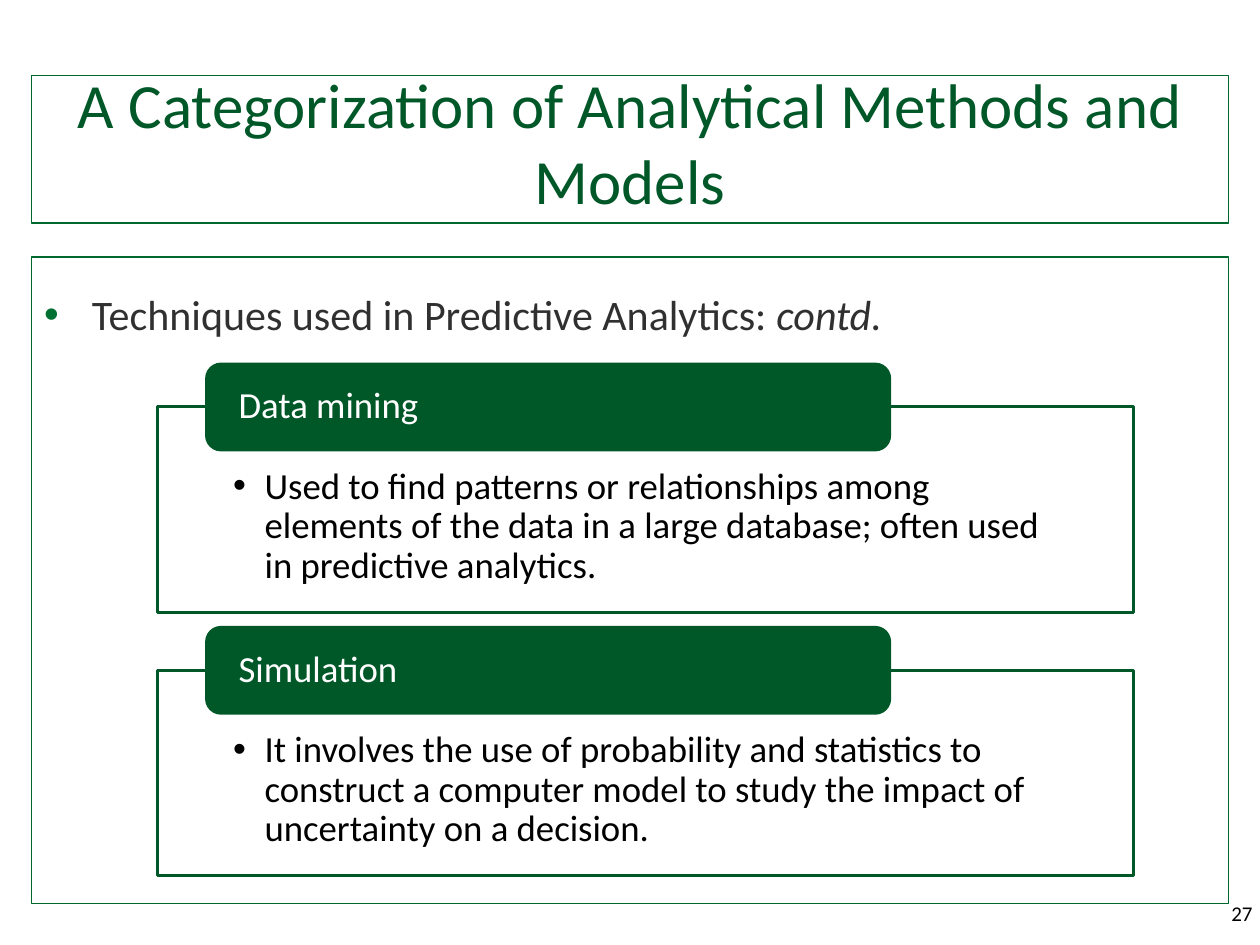
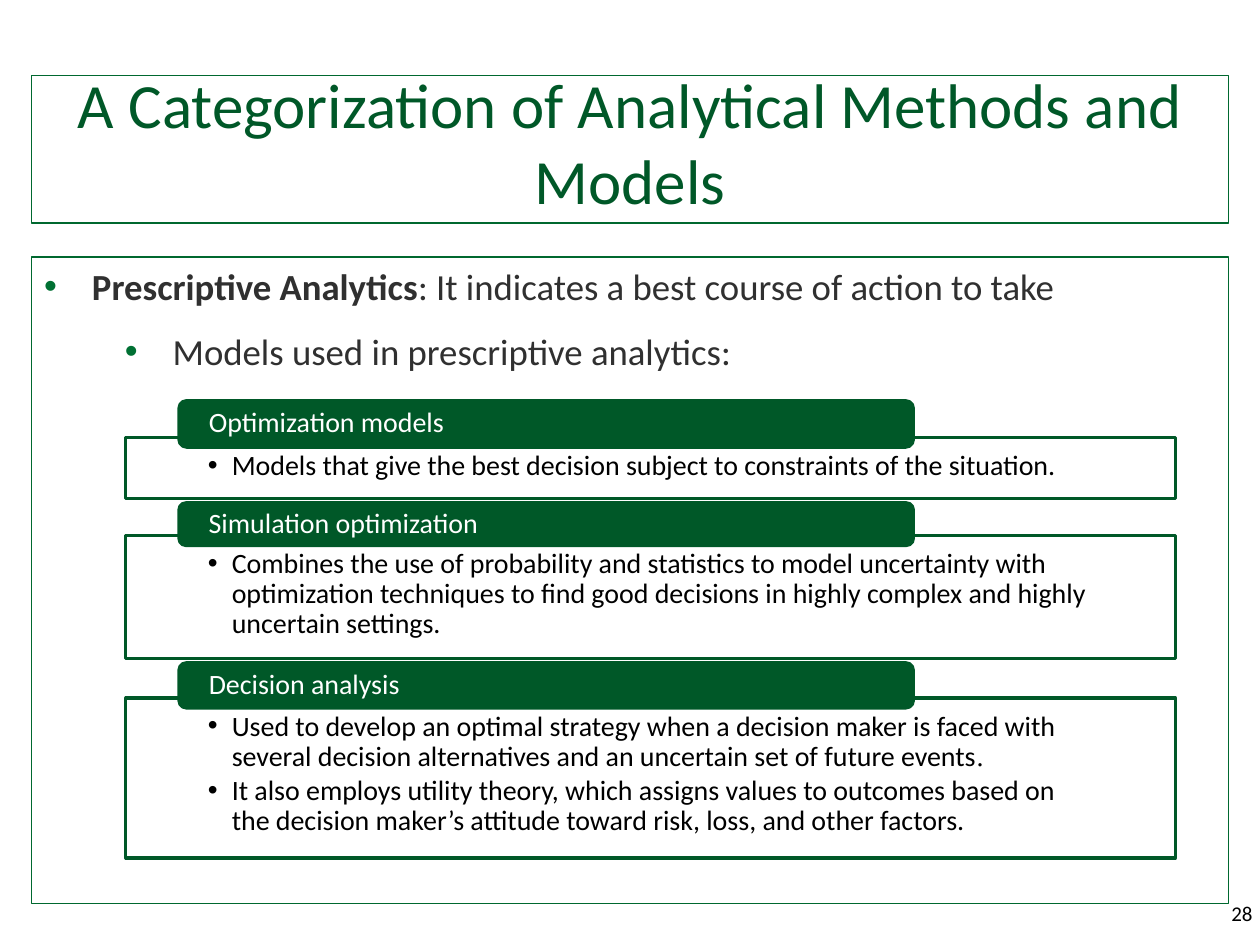
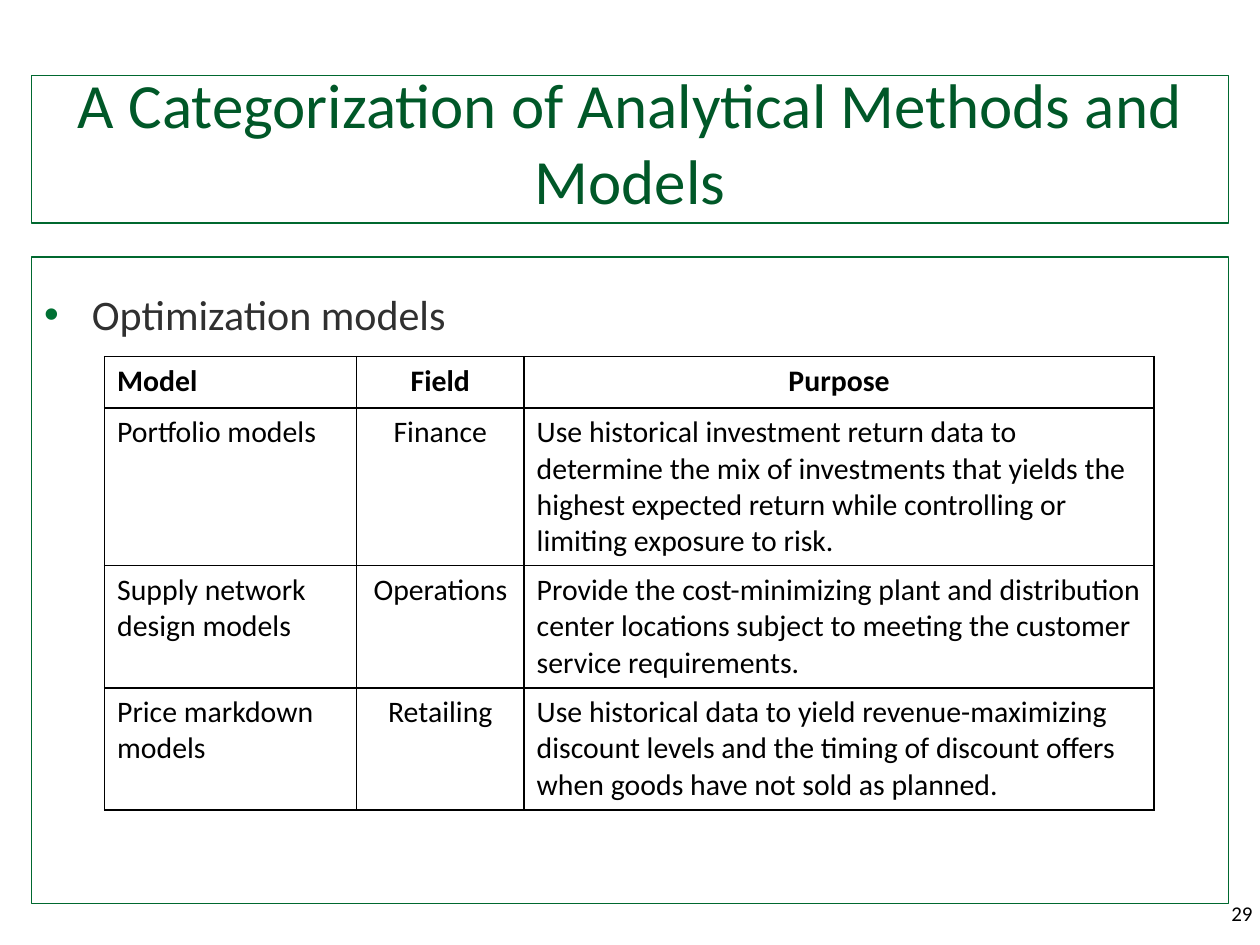
from pptx import Presentation
from pptx.dml.color import RGBColor
from pptx.enum import shapes, text
from pptx.oxml import ns
from pptx import util as u
from lxml import etree

GREEN = RGBColor(0x00, 0x58, 0x28)
BORDER = RGBColor(0x00, 0x68, 0x2F)
BULLET = RGBColor(0x00, 0x70, 0x33)
GREY = RGBColor(0x30, 0x30, 0x30)
BLACK = RGBColor(0, 0, 0)
WHITE = RGBColor(0xFF, 0xFF, 0xFF)
LEFT, CENTER, RIGHT = text.PP_ALIGN.LEFT, text.PP_ALIGN.CENTER, text.PP_ALIGN.RIGHT

TITLE = "A Categorization of Analytical Methods and Models"


def sub(parent, tag, **attrs):
    return etree.SubElement(parent, ns.qn(tag), attrs)


def add_color(parent, color):
    sub(sub(parent, "a:solidFill"), "a:srgbClr", val=str(color))


def add_bullet(p, margin, hang, color):
    pPr = p._p.get_or_add_pPr()
    pPr.set("marL", str(u.Inches(margin)))
    pPr.set("indent", str(-u.Inches(hang)))
    sub(sub(pPr, "a:buClr"), "a:srgbClr", val=str(color))
    sub(pPr, "a:buFont", typeface="Arial")
    sub(pPr, "a:buChar", char="•")


def write(p, runs, size, color, align=LEFT, bold=False, spacing=1.0,
          before=0, after=0, bullet=None, level=0):
    p.level = level
    if bullet:
        add_bullet(p, *bullet)
    p.alignment = align
    p.line_spacing = spacing
    p.space_before = u.Pt(before)
    p.space_after = u.Pt(after)
    for content, changes in [(runs, {})] if isinstance(runs, str) else runs:
        r = p.add_run()
        r.text = content
        r.font.size = u.Pt(size)
        r.font.color.rgb = color
        r.font.bold = changes.get("bold", bold)
        r.font.italic = changes.get("italic", False)
        r.font.name = changes.get("name", "Calibri")


def paragraphs(tf, count):
    return [tf.paragraphs[0]] + [tf.add_paragraph() for _ in range(count - 1)]


def place(sp, left, top, width, height):
    sp.left, sp.top = u.Inches(left), u.Inches(top)
    sp.width, sp.height = u.Inches(width), u.Inches(height)


class Deck:
    def __init__(self):
        self.prs = Presentation()
        self.prs.slide_width, self.prs.slide_height = u.Inches(10), u.Inches(7.5)
        self.s = None

    def slide(self, number):
        self.s = self.prs.slides.add_slide(self.prs.slide_layouts[1])
        tf = self.panel(self.s.shapes.title, 0.6, 1.17, text.MSO_ANCHOR.BOTTOM)
        write(tf.paragraphs[0], TITLE, 36, GREEN, CENTER)
        sp = self.s.shapes.add_textbox(u.Inches(9.21), u.Inches(7.1), u.Inches(0.83), u.Inches(0.4))
        sp.text_frame.word_wrap = True
        write(sp.text_frame.paragraphs[0], str(number), 12, BLACK, RIGHT)

    def panel(self, sp, top, height, anchor):
        place(sp, 0.25, top, 9.5, height)
        sp.line.color.rgb = BORDER
        sp.line.width = u.Pt(0.75)
        tf = sp.text_frame
        tf.auto_size = text.MSO_AUTO_SIZE.NONE
        tf.vertical_anchor = anchor
        return tf

    def body(self, items, size, spacing):
        tf = self.panel(self.s.placeholders[1], 2.04, 5.13, text.MSO_ANCHOR.TOP)
        for level, (p, runs) in enumerate(zip(paragraphs(tf, len(items)), items)):
            write(p, runs, size, GREY, spacing=spacing, before=6 if level else 0, after=6,
                  bullet=(0.38 + 0.64 * level, 0.38, BULLET), level=level)

    def box(self, kind, at, insets, anchor):
        sp = self.s.shapes.add_shape(kind, *map(u.Inches, at))
        sp.shadow.inherit = False
        sp.fill.background()
        sp.line.color.rgb = GREEN
        sp.line.width = u.Pt(1.75)
        tf = sp.text_frame
        tf.word_wrap = True
        tf.vertical_anchor = anchor
        tf.margin_left = tf.margin_right = u.Inches(insets[0])
        tf.margin_top, tf.margin_bottom = u.Inches(insets[1]), u.Inches(insets[2])
        return sp

    def card(self, label, points, top, height, label_height, *, left, width, label_left,
             label_width, overlap, insets, size, hang):
        frame = self.box(shapes.MSO_SHAPE.RECTANGLE, (left, top, width, height),
                         insets, text.MSO_ANCHOR.TOP)
        for p, runs in zip(paragraphs(frame.text_frame, len(points)), points):
            write(p, runs, size, BLACK, spacing=0.9, after=0.15 * size,
                  bullet=(hang, hang, BLACK))
        tab = self.box(shapes.MSO_SHAPE.ROUNDED_RECTANGLE,
                       (label_left, top + overlap - label_height, label_width, label_height),
                       (0.22, 0, 0), text.MSO_ANCHOR.MIDDLE)
        tab.fill.solid()
        tab.fill.fore_color.rgb = GREEN
        write(tab.text_frame.paragraphs[0], label, size, WHITE, spacing=0.9)

    def table(self, rows, left, top, widths, heights):
        sp = self.s.shapes.add_table(len(rows), len(widths), u.Inches(left), u.Inches(top),
                                     u.Inches(sum(widths)), u.Inches(sum(heights)))
        tbl = sp.table
        tbl.horz_banding = False
        for column, width in zip(tbl.columns, widths):
            column.width = u.Inches(width)
        for i, (row, height) in enumerate(zip(rows, heights)):
            tbl.rows[i].height = u.Inches(height)
            for j, content in enumerate(row):
                centered = j == 1 or (i == 0 and j == 2)
                self.cell(tbl.cell(i, j), content, CENTER if centered else LEFT, i == 0)

    def cell(self, cell, content, align, bold):
        tcPr = cell._tc.get_or_add_tcPr()
        for side in ("a:lnL", "a:lnR", "a:lnT", "a:lnB"):
            add_color(sub(tcPr, side, w=str(u.Pt(1))), BLACK)
        cell.fill.background()
        lines = content.split("\n")
        for p, line in zip(paragraphs(cell.text_frame, len(lines)), lines):
            write(p, line, 17, BLACK, align, bold)


def main():
    deck = Deck()

    deck.slide(27)
    deck.body([[("Techniques used in Predictive Analytics: ", {}), ("contd.", {"italic": True})]],
              24, 1.5)
    techniques = [
        ("Data mining", "Used to find patterns or relationships among elements of the data in a "
                        "large database; often used in predictive analytics."),
        ("Simulation", "It involves the use of probability and statistics to construct a computer "
                       "model to study the impact of uncertainty on a decision."),
    ]
    for i, (label, point) in enumerate(techniques):
        deck.card(label, [point], 3.23 + 2.09 * i, 1.63, 0.68, left=1.25, width=7.75,
                  label_left=1.64, label_width=5.42, overlap=0.34, insets=(0.6, 0.48, 0.16),
                  size=21, hang=0.25)

    deck.slide(28)
    deck.body([[("Prescriptive Analytics", {"bold": True}),
                (": It indicates a best course of action to take", {})],
               "Models used in prescriptive analytics:"], 21, 1.0)
    models = [
        ("Optimization models",
         ["Models that give the best decision subject to constraints of the situation."],
         3.47, 0.49, 0.37),
        ("Simulation optimization",
         ["Combines the use of probability and statistics to model uncertainty with optimization "
          "techniques to find good decisions in highly complex and highly uncertain settings."],
         4.25, 0.98, 0.34),
        ("Decision analysis",
         [[("Used to develop an optimal strategy when a decision maker is faced with several "
            "decision alternatives and an uncertain set of future events", {}),
           (".", {"name": "Times New Roman"})],
          "It also employs utility theory, which assigns values to outcomes based on the decision "
          "maker’s attitude toward risk, loss, and other factors."],
         5.54, 1.27, 0.36),
    ]
    for model in models:
        deck.card(*model, left=1, width=8.33, label_left=1.42, label_width=5.83, overlap=0.08,
                  insets=(0.65, 0.11, 0.12), size=16, hang=0.19)

    deck.slide(29)
    deck.body(["Optimization models"], 24, 1.5)
    deck.table([
        ("Model", "Field", "Purpose"),
        ("Portfolio models", "Finance",
         "Use historical investment return data to determine the mix of investments that yields "
         "the highest expected return while controlling or limiting exposure to risk."),
        ("Supply network\ndesign models", "Operations",
         "Provide the cost-minimizing plant and distribution center locations subject to meeting "
         "the customer service requirements."),
        ("Price markdown models", "Retailing",
         "Use historical data to yield revenue-maximizing discount levels and the timing of "
         "discount offers when goods have not sold as planned."),
    ], 0.83, 2.83, (2, 1.33, 5), (0.41, 1.25, 0.97, 0.97))

    deck.prs.save("out.pptx")


if __name__ == "__main__":
    main()
